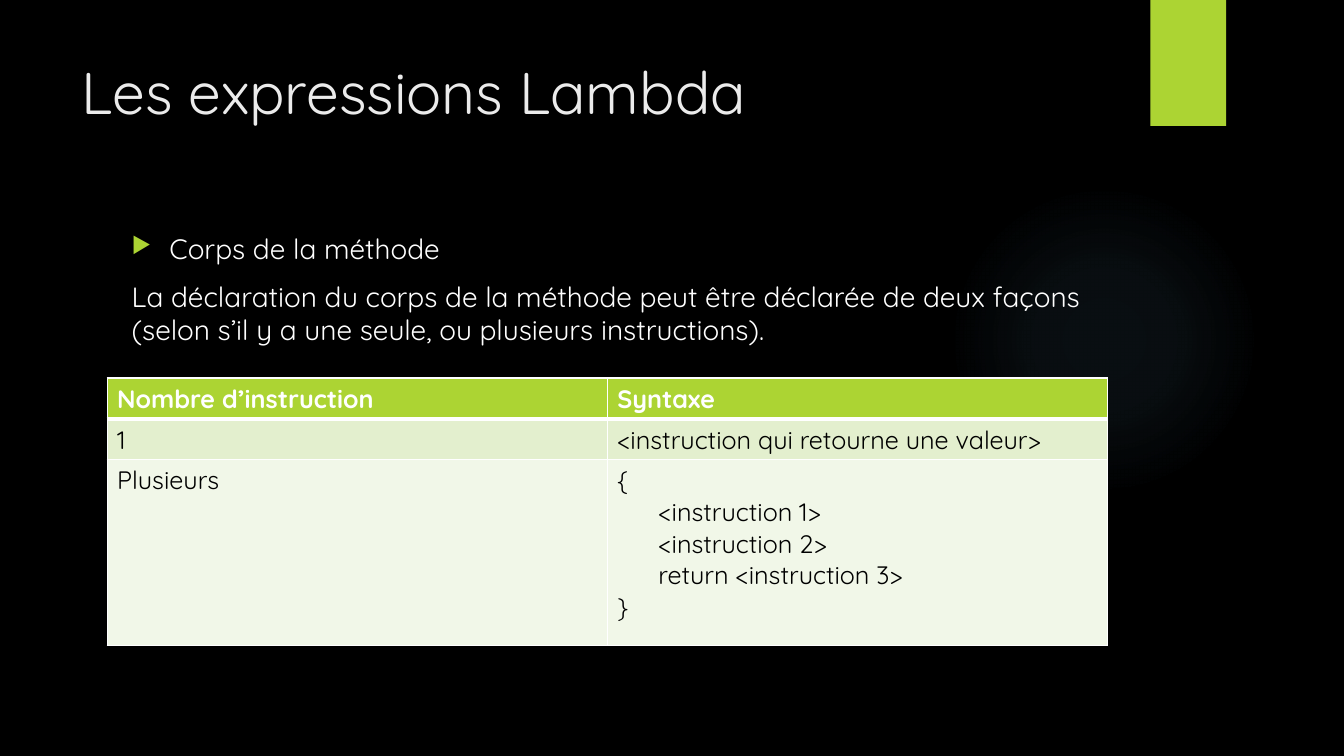
from lxml import etree
from pptx import Presentation
from pptx import util as u
from pptx.dml.color import RGBColor
from pptx.enum import shapes
from pptx.oxml import parse_xml
from pptx.oxml.ns import nsdecls, qn

FONT = "Quicksand"
LIME, WHITE, BLACK, SKY = "ACD433", "FFFFFF", "000000", "7AC4F0"


def color(hex_value):
    return RGBColor.from_string(hex_value)


def add_xml(parent, tag, **attributes):
    return etree.SubElement(parent, qn(tag), attributes)


class Deck:
    def __init__(self, width, height, background):
        self.presentation = Presentation()
        self.presentation.slide_width = u.Pt(width)
        self.presentation.slide_height = u.Pt(height)
        self.slide = self.presentation.slides.add_slide(self.presentation.slide_layouts[6])
        fill = self.slide.background.fill
        fill.solid()
        fill.fore_color.rgb = color(background)

    def shape(self, kind, *box, fill):
        drawn = self.slide.shapes.add_shape(kind, *map(u.Pt, box))
        drawn.shadow.inherit = False
        drawn.fill.solid()
        drawn.fill.fore_color.rgb = color(fill)
        drawn.line.fill.background()
        return drawn

    def glow(self, *box, hex_value, stops):
        """Circle that fades outwards; stops are (position, opacity) in percent."""
        halo = self.shape(shapes.MSO_SHAPE.OVAL, *box, fill=hex_value)
        gradient = parse_xml(f'<a:gradFill {nsdecls("a")} rotWithShape="1"/>')
        stop_list = add_xml(gradient, "a:gsLst")
        for position, opacity in stops:
            stop = add_xml(stop_list, "a:gs", pos=str(position * 1000))
            tint = add_xml(stop, "a:srgbClr", val=hex_value)
            add_xml(tint, "a:alpha", val=str(opacity * 1000))
        circle = add_xml(gradient, "a:path", path="circle")
        add_xml(circle, "a:fillToRect", l="50000", t="50000", r="50000", b="50000")
        properties = halo._element.spPr
        properties.replace(properties.find(qn("a:solidFill")), gradient)

    def format(self, paragraph, size, hex_value, bold=False):
        for run in paragraph.runs:
            run.font.name = FONT
            run.font.size = u.Pt(size)
            run.font.bold = bold
            run.font.color.rgb = color(hex_value)

    def text(self, *box, lines, size, hex_value, gap=0, bulleted=()):
        frame = self.slide.shapes.add_textbox(*map(u.Pt, box)).text_frame
        frame.word_wrap = True
        frame.text = "\n".join(lines)
        for index, paragraph in enumerate(frame.paragraphs):
            if index:
                paragraph.space_before = u.Pt(gap)
            if index in bulleted:
                self.bullet(paragraph)
            self.format(paragraph, size, hex_value)

    def bullet(self, paragraph):
        properties = paragraph._p.get_or_add_pPr()
        indent = u.Pt(27)
        properties.set("marL", str(indent))
        properties.set("indent", str(-indent))
        add_xml(add_xml(properties, "a:buClr"), "a:srgbClr", val=LIME)
        add_xml(properties, "a:buSzPct", val="80000")
        add_xml(properties, "a:buChar", char="▶")

    def borders(self, cell, bottom):
        properties = cell._tc.get_or_add_tcPr()
        widths = {"a:lnL": 1, "a:lnR": 1, "a:lnT": 1, "a:lnB": bottom}
        for index, (side, width) in enumerate(widths.items()):
            line = parse_xml(f'<{side} {nsdecls("a")} w="{u.Pt(width)}"/>')
            add_xml(add_xml(line, "a:solidFill"), "a:srgbClr", val=WHITE)
            properties.insert(index, line)

    def table(self, left, top, column_width, row_heights, rows, fills, size):
        columns = len(rows[0])
        grid = self.slide.shapes.add_table(
            len(rows), columns, u.Pt(left), u.Pt(top),
            u.Pt(column_width * columns), u.Pt(sum(row_heights))).table
        for column in grid.columns:
            column.width = u.Pt(column_width)
        for index, (height, values, fill) in enumerate(zip(row_heights, rows, fills)):
            header = index == 0
            grid.rows[index].height = u.Pt(height)
            for cell, value in zip(grid.rows[index].cells, values):
                cell.text_frame.text = value
                cell.fill.solid()
                cell.fill.fore_color.rgb = color(fill)
                self.borders(cell, bottom=3 if header else 1)
                for paragraph in cell.text_frame.paragraphs:
                    self.format(paragraph, size, WHITE if header else BLACK, bold=header)


def main():
    deck = Deck(960, 540, BLACK)
    deck.glow(677.5, 131.75, 221.75, 221.75, hex_value=SKY,
              stops=[(0, 7), (36, 6), (69, 0), (100, 0)])
    deck.shape(shapes.MSO_SHAPE.RECTANGLE, 821.75, 0, 54, 90, fill=LIME)
    deck.text(51, 36, 741, 110, lines=["Les expressions Lambda"], size=42, hex_value="EBEBEB")
    deck.text(87, 162, 704, 330, size=20, hex_value=WHITE, gap=10, bulleted=[0], lines=[
        "Corps de la méthode",
        "La déclaration du corps de la méthode peut être déclarée de deux façons "
        "(selon s’il y a une seule, ou plusieurs instructions).",
    ])
    block = """{
      <instruction 1>
      <instruction 2>
      return <instruction 3>
}"""
    deck.table(76.5, 270, 357.25, [29.2, 29.2, 132.5], size=18,
               fills=[LIME, "E3EFCE", "F1F7E8"],
               rows=[["Nombre d’instruction", "Syntaxe"],
                     ["1", "<instruction qui retourne une valeur>"],
                     ["Plusieurs", block]])
    deck.presentation.save("out.pptx")


if __name__ == "__main__":
    main()
